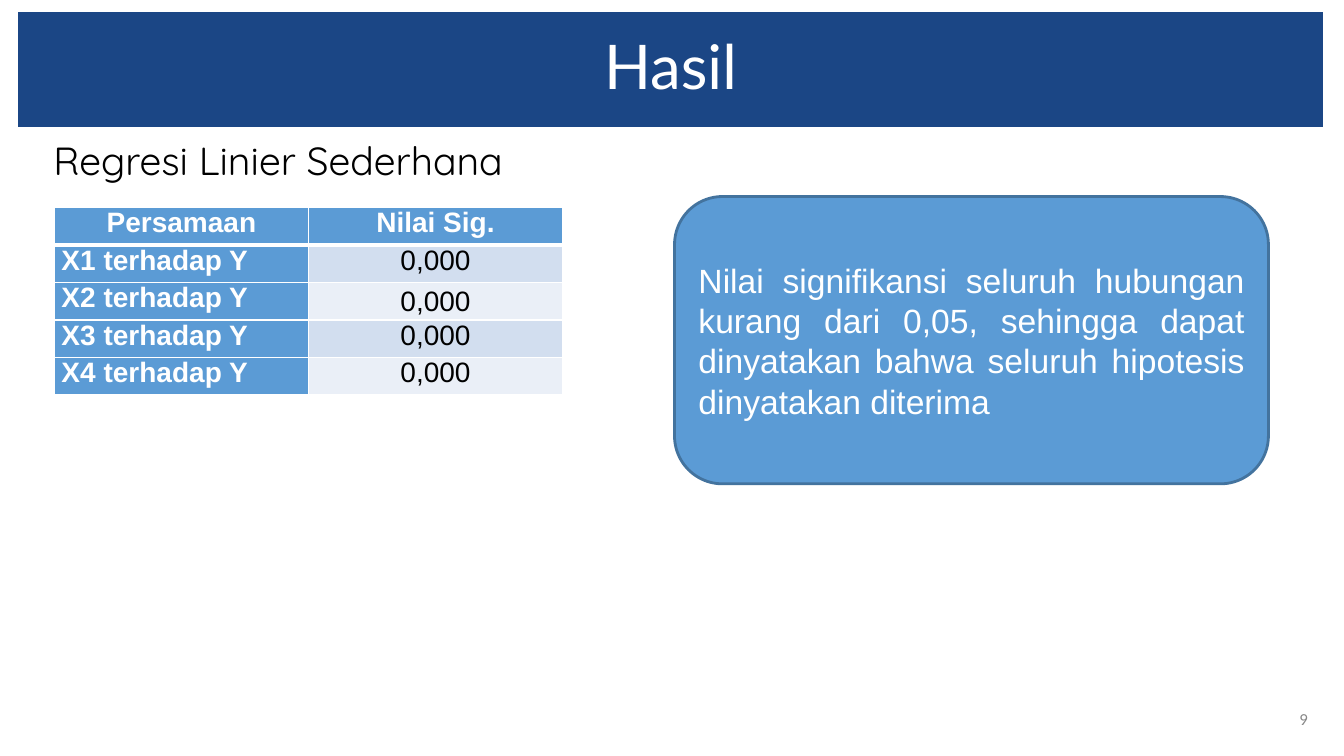
from dataclasses import dataclass

from lxml import etree
from pptx import Presentation
from pptx.dml.color import RGBColor
from pptx.enum.shapes import MSO_SHAPE
from pptx.enum.text import MSO_ANCHOR, MSO_AUTO_SIZE, PP_ALIGN
from pptx.oxml.ns import qn
from pptx.util import Inches, Pt

CENTER, JUSTIFY, RIGHT = PP_ALIGN.CENTER, PP_ALIGN.JUSTIFY, PP_ALIGN.RIGHT
TOP, MIDDLE = MSO_ANCHOR.TOP, MSO_ANCHOR.MIDDLE
ROUNDED = MSO_SHAPE.ROUNDED_RECTANGLE
NO_AUTOFIT = MSO_AUTO_SIZE.NONE

WHITE, BLACK, GREY = "FFFFFF", "000000", "888888"
NAVY, BLUE, BLUE_EDGE = "1B4685", "5B9BD5", "43739E"
BANDS = ("D2DEEF", "EAEFF7")


@dataclass
class Style:
    font: str
    size: float
    color: str
    align: PP_ALIGN = None
    bold: bool = False


@dataclass
class Result:
    equation: str
    sig: str
    anchor: MSO_ANCHOR = TOP


RESULTS = [
    Result("X1 terhadap Y", "0,000"),
    Result("X2 terhadap Y", "0,000", MIDDLE),
    Result("X3 terhadap Y", "0,000"),
    Result("X4 terhadap Y", "0,000"),
]
HEADER = Style("Arial", 20, WHITE, CENTER, True)
ROW_LABEL = Style("Arial", 20, WHITE, JUSTIFY, True)
VALUE = Style("Arial", 20, BLACK, CENTER)


def rgb(color: str) -> RGBColor:
    return RGBColor.from_string(color)


def paint(target, color: str) -> None:
    target.fill.solid()
    target.fill.fore_color.rgb = rgb(color)


def place(sp, left: float, top: float, width: float, height: float) -> None:
    sp.left, sp.top = Inches(left), Inches(top)
    sp.width, sp.height = Inches(width), Inches(height)


def write(tf, text: str, style: Style, anchor: MSO_ANCHOR = MIDDLE):
    tf.word_wrap = True
    tf.vertical_anchor = anchor
    p = tf.paragraphs[0]
    p.text = text
    p.alignment = style.align
    p.font.name = style.font
    p.font.size = Pt(style.size)
    p.font.bold = style.bold
    p.font.color.rgb = rgb(style.color)
    return p


def add_borders(cell, top: float, bottom: float) -> None:
    tc_pr = cell._tc.get_or_add_tcPr()
    for side, width in (("L", 1), ("R", 1), ("T", top), ("B", bottom)):
        ln = etree.SubElement(tc_pr, qn(f"a:ln{side}"), w=str(Pt(width)))
        fill = etree.SubElement(ln, qn("a:solidFill"))
        etree.SubElement(fill, qn("a:srgbClr"), val=WHITE)


def fill_cell(cell, text: str, style: Style, color: str, row: int,
              anchor: MSO_ANCHOR = TOP) -> None:
    cell.margin_left = cell.margin_right = Inches(0.07)
    cell.margin_top = cell.margin_bottom = 0
    # A thicker rule separates the header from the data
    add_borders(cell, 3 if row == 1 else 1, 3 if row == 0 else 1)
    paint(cell, color)
    write(cell.text_frame, text, style)
    cell.vertical_anchor = anchor


def add_results(slide) -> None:
    rows = len(RESULTS) + 1
    table = slide.shapes.add_table(rows, 2, Inches(0.54), Inches(2.06),
                                   Inches(5.04), Inches(1.86)).table
    table.first_row = table.horz_banding = False
    for col, heading in enumerate(("Persamaan", "Nilai Sig.")):
        fill_cell(table.cell(0, col), heading, HEADER, BLUE, 0)
    for row, result in enumerate(RESULTS, start=1):
        band = BANDS[(row - 1) % 2]
        fill_cell(table.cell(row, 0), result.equation, ROW_LABEL, BLUE, row)
        fill_cell(table.cell(row, 1), result.sig, VALUE, band, row, result.anchor)


def main() -> None:
    prs = Presentation()
    prs.slide_width, prs.slide_height = Inches(13.33), Inches(7.5)
    slide = prs.slides.add_slide(prs.slide_layouts[1])

    # Title band
    title = slide.shapes.title
    place(title, 0.18, 0.12, 12.94, 1.14)
    paint(title, NAVY)
    p = write(title.text_frame, "Hasil", Style("Lato", 44, WHITE, CENTER))
    p.line_spacing = 0.9
    title.text_frame.auto_size = NO_AUTOFIT

    # Subheading
    body = slide.placeholders[1]
    place(body, 0.18, 1.35, 12.94, 5.57)
    p_pr = body.text_frame.paragraphs[0]._p.get_or_add_pPr()
    p_pr.set("marL", str(Inches(0.5)))
    p_pr.set("indent", str(Inches(-0.25)))
    etree.SubElement(p_pr, qn("a:buNone"))
    p = write(body.text_frame, "Regresi Linier Sederhana",
              Style("Quicksand", 28, BLACK), TOP)
    p.line_spacing = 0.9
    p.space_before = 0
    body.text_frame.auto_size = NO_AUTOFIT

    # Conclusion
    sp = slide.shapes.add_shape(ROUNDED, Inches(6.69), Inches(1.95),
                                Inches(5.89), Inches(2.85))
    sp.shadow.inherit = False
    paint(sp, BLUE)
    sp.line.color.rgb = rgb(BLUE_EDGE)
    sp.line.width = Pt(2)
    write(sp.text_frame,
          "Nilai signifikansi seluruh hubungan kurang dari 0,05, sehingga dapat "
          "dinyatakan bahwa seluruh hipotesis dinyatakan diterima",
          Style("Arial", 24, WHITE, JUSTIFY))

    # Regression results
    add_results(slide)

    # Page number
    number = slide.shapes.add_textbox(Inches(12.5), Inches(6.93),
                                      Inches(0.57), Inches(0.4))
    write(number.text_frame, "9", Style("Calibri", 12, GREY, RIGHT))

    prs.save("out.pptx")


if __name__ == "__main__":
    main()
